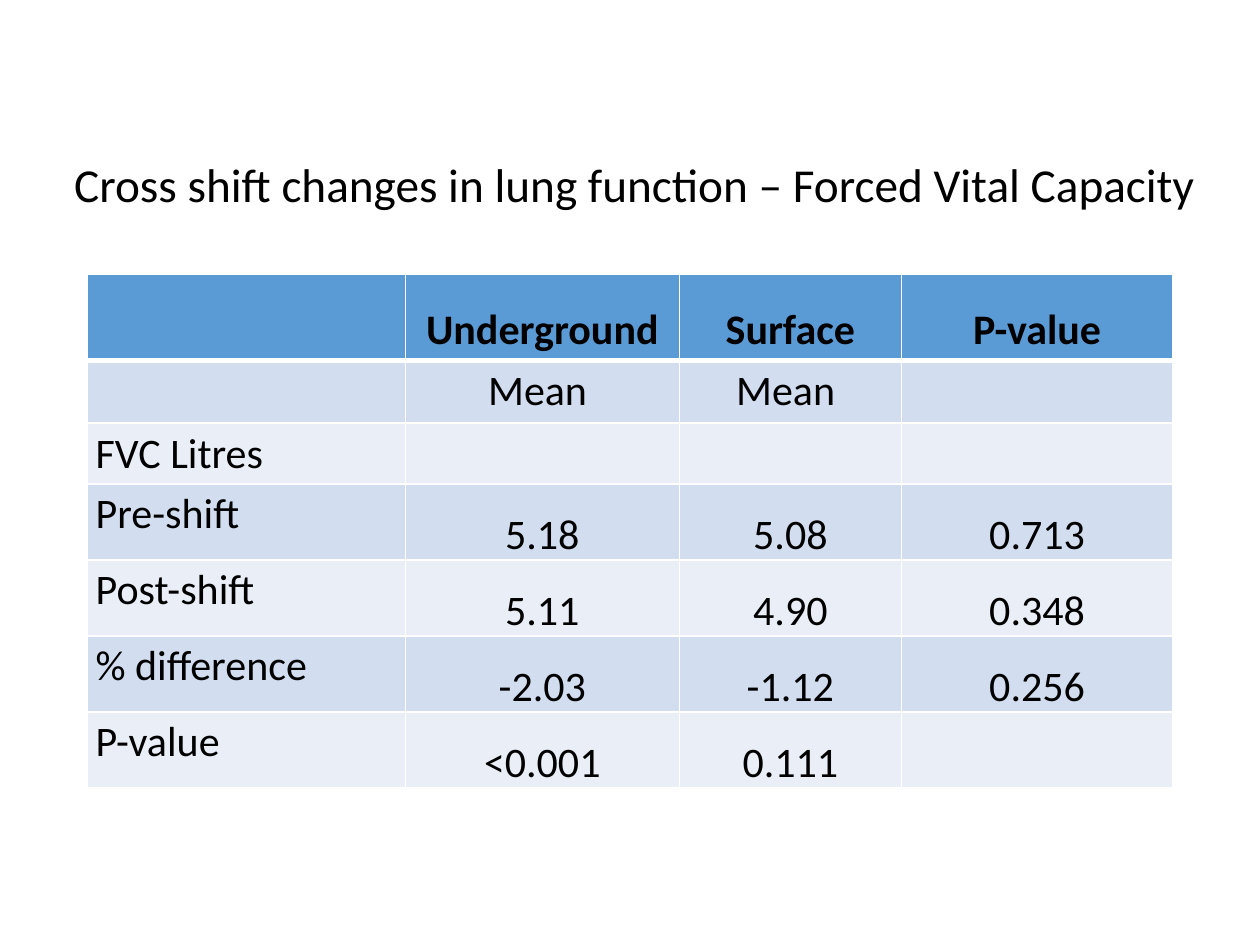
"""Build the slide on cross shift changes in forced vital capacity."""
from dataclasses import dataclass
from typing import Optional

from lxml.etree import SubElement
from pptx import Presentation
from pptx.dml.color import RGBColor
from pptx.enum.text import MSO_ANCHOR, PP_ALIGN
from pptx.oxml.ns import qn
from pptx.util import Pt


@dataclass(frozen=True)
class Theme:
    font: str = "Calibri"
    ink: str = "000000"
    line: str = "FFFFFF"
    head: str = "5B9BD5"
    bands: tuple = ("D2DEEF", "EAEFF7")
    title: float = 27
    body: float = 24
    thin: float = 1
    thick: float = 3


@dataclass(frozen=True)
class Style:
    align: PP_ALIGN = PP_ALIGN.CENTER
    anchor: MSO_ANCHOR = MSO_ANCHOR.MIDDLE
    side: float = 4.5
    edge: float = 0
    space: Optional[float] = 1.5
    bold: bool = False


@dataclass(frozen=True)
class Row:
    height: float
    texts: tuple
    styles: tuple


THEME = Theme()
VALUE = Style()
LABEL = Style(PP_ALIGN.LEFT, MSO_ANCHOR.TOP, 5, 2.9, None)
MEAN = Style(PP_ALIGN.CENTER, MSO_ANCHOR.TOP, 5, 2.9, None)
GROUP = Style(bold=True)
TOP = Style(anchor=MSO_ANCHOR.TOP, side=5, edge=2.9, bold=True)
LAST = Style(side=5, edge=2.9, bold=True)
DATA = (LABEL, VALUE, VALUE, VALUE)

WIDTHS = (182, 156.5, 127, 155)
ROWS = (
    Row(49, ("", "Underground", "Surface", "P-value"), (LABEL, GROUP, TOP, LAST)),
    Row(36, ("", "Mean ", "Mean ", ""), (LABEL, MEAN, MEAN, MEAN)),
    Row(34, ("FVC Litres", "", "", ""), DATA),
    Row(43.5, ("Pre-shift", "5.18", "5.08", "0.713"), DATA),
    Row(43.5, ("Post-shift", "5.11", "4.90", "0.348"), DATA),
    Row(43.5, ("% difference", "-2.03", "-1.12", "0.256"), DATA),
    Row(43.5, ("P-value", "<0.001", "0.111", ""), DATA),
)


def add_run(para, text: str, size: float, bold: bool = False) -> None:
    """Add one run in the theme font."""
    run = para.add_run()
    run.text = text
    run.font.name = THEME.font
    run.font.size = Pt(size)
    run.font.bold = bold
    run.font.color.rgb = RGBColor.from_string(THEME.ink)


def add_title(slide, text: str) -> None:
    """Place the title above the table."""
    box = slide.shapes.add_textbox(Pt(35.3), Pt(67.7), Pt(661), Pt(78.5))
    frame = box.text_frame
    frame.word_wrap = True
    frame.vertical_anchor = MSO_ANCHOR.MIDDLE
    para = frame.paragraphs[0]
    para.line_spacing = 0.9
    add_run(para, text, THEME.title)


def add_lines(cell, index: int) -> None:
    """Draw the cell borders, thick below the header row."""
    props = cell._tc.get_or_add_tcPr()
    heavy = {0: "lnB", 1: "lnT"}.get(index)
    for tag in ("lnL", "lnR", "lnT", "lnB"):
        width = THEME.thick if tag == heavy else THEME.thin
        line = SubElement(props, qn(f"a:{tag}"), w=str(Pt(width)))
        fill = SubElement(line, qn("a:solidFill"))
        SubElement(fill, qn("a:srgbClr"), val=THEME.line)


def fill_cell(cell, index: int, text: str, style: Style) -> None:
    """Set the border, fill and text of one cell."""
    add_lines(cell, index)
    cell.fill.solid()
    shade = THEME.bands[(index - 1) % 2] if index else THEME.head
    cell.fill.fore_color.rgb = RGBColor.from_string(shade)
    cell.margin_left = cell.margin_right = Pt(style.side)
    cell.margin_top = cell.margin_bottom = Pt(style.edge)
    cell.vertical_anchor = style.anchor
    if text:
        para = cell.text_frame.paragraphs[0]
        para.alignment = style.align
        if style.space:
            para.line_spacing = style.space
        add_run(para, text, THEME.body, style.bold)


def add_grid(slide) -> None:
    """Add the table of lung function values."""
    high = sum(row.height for row in ROWS)
    frame = slide.shapes.add_table(
        len(ROWS), len(WIDTHS), Pt(49.7), Pt(156.8), Pt(sum(WIDTHS)), Pt(high)
    )
    table = frame.table
    for col, width in zip(table.columns, WIDTHS):
        col.width = Pt(width)
    for index, row in enumerate(ROWS):
        table.rows[index].height = Pt(row.height)
        for col, (text, style) in enumerate(zip(row.texts, row.styles)):
            fill_cell(table.cell(index, col), index, text, style)


def main() -> None:
    """Build and save the slide."""
    deck = Presentation()
    deck.slide_width, deck.slide_height = Pt(720), Pt(540)
    slide = deck.slides.add_slide(deck.slide_layouts[6])
    add_title(slide, "Cross shift changes in lung function – Forced Vital Capacity")
    add_grid(slide)
    deck.save("out.pptx")


if __name__ == "__main__":
    main()
